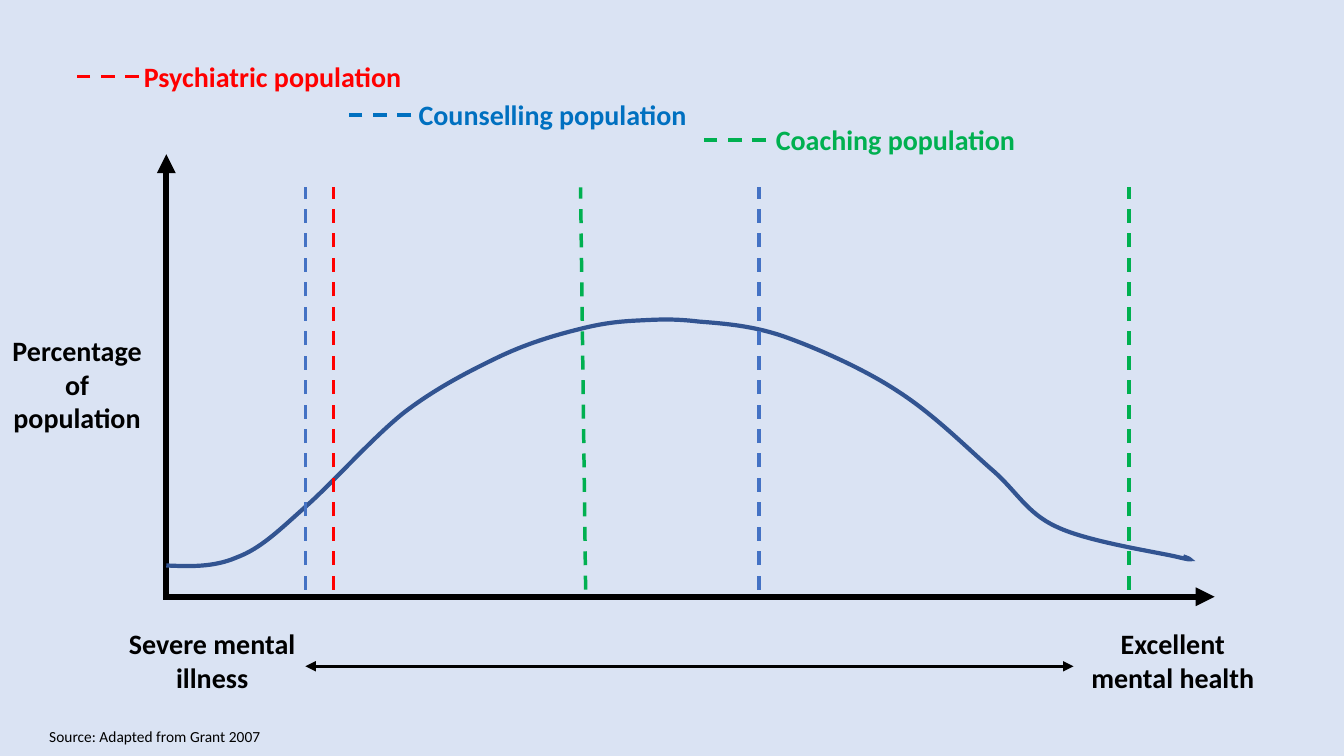
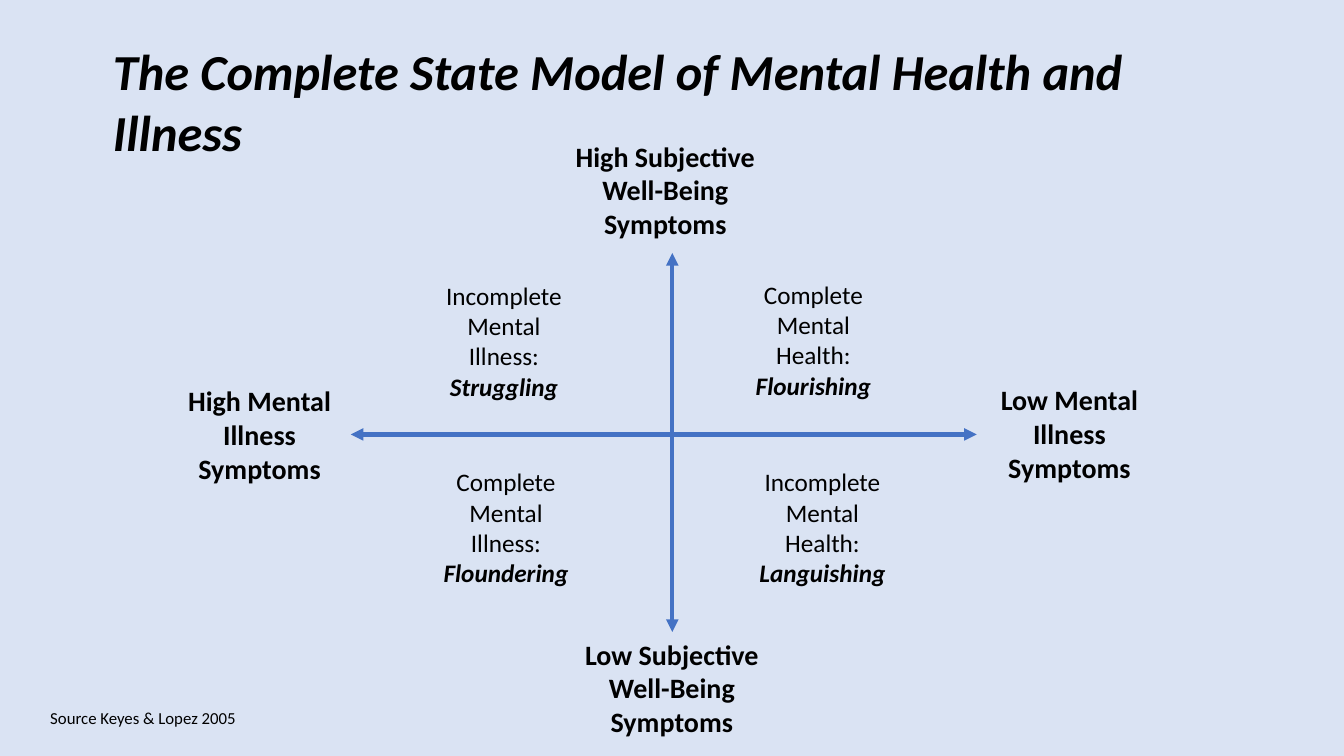
from dataclasses import dataclass

from lxml.etree import SubElement
from pptx import Presentation
from pptx.dml.color import RGBColor
from pptx.enum.dml import MSO_LINE
from pptx.enum.shapes import MSO_CONNECTOR
from pptx.enum.text import MSO_ANCHOR, MSO_AUTO_SIZE as AutoSize, PP_ALIGN as Align
from pptx.oxml.ns import qn
from pptx.util import Inches, Pt


@dataclass(frozen=True)
class Theme:
    font: str = "Calibri"
    background: str = "DAE3F3"
    ink: str = "000000"
    curve: str = "325491"
    blue: str = "4472C4"
    psychiatric: str = "FF0000"
    counselling: str = "0070C0"
    coaching: str = "00B050"
    title: int = 36
    label: int = 20
    body: int = 18
    source: int = 12
    small_source: int = 11
    axis: float = 4.5
    arrow: float = 3
    thin: float = 2.5


THEME = Theme()
TITLE_ONLY, BLANK = 5, 6


def write(para, text, size=THEME.label, color=THEME.ink, bold=False, italic=False):
    """Add one formatted span of text to a paragraph."""
    span = para.add_run()
    span.text = text
    font = span.font
    font.name, font.size = THEME.font, Pt(size)
    font.bold, font.italic = bold, italic
    font.color.rgb = RGBColor.from_string(color)


class Builder:
    """Holds the deck, its style and the current slide."""

    def __init__(self, theme):
        self.theme = theme
        self.deck = Presentation()
        self.deck.slide_width, self.deck.slide_height = Inches(40 / 3), Inches(7.5)
        fill = self.deck.slide_master.background.fill
        fill.solid()
        fill.fore_color.rgb = RGBColor.from_string(theme.background)
        self.page = None

    def add_page(self, layout):
        self.page = self.deck.slides.add_slide(self.deck.slide_layouts[layout])

    def setup(self, box, align):
        frame = box.text_frame
        frame.word_wrap = True
        frame.auto_size = AutoSize.SHAPE_TO_FIT_TEXT
        frame.vertical_anchor = MSO_ANCHOR.TOP
        para = frame.paragraphs[0]
        para.alignment = align
        return para

    def title(self, text, left, top, width, height):
        box = self.page.shapes.title
        box.left, box.top = Inches(left), Inches(top)
        box.width, box.height = Inches(width), Inches(height)
        write(self.setup(box, Align.LEFT), text,
              size=self.theme.title, bold=True, italic=True)

    def text_box(self, left, top, width, height, align=Align.CENTER):
        box = self.page.shapes.add_textbox(
            Inches(left), Inches(top), Inches(width), Inches(height))
        return self.setup(box, align)

    def label(self, text, place, color=THEME.ink, align=Align.CENTER):
        write(self.text_box(*place, align), text, color=color, bold=True)

    def source(self, text, place, size):
        write(self.text_box(*place, Align.LEFT), text, size=size)

    def line(self, start, end, color, width, dashed=False, ends=()):
        line = self.page.shapes.add_connector(
            MSO_CONNECTOR.STRAIGHT, *map(Inches, start + end))
        line.line.color.rgb = RGBColor.from_string(color)
        line.line.width = Pt(width)
        if dashed:
            line.line.dash_style = MSO_LINE.DASH
        outline = line.line._get_or_add_ln()
        for end_name in ends:
            SubElement(outline, qn(f"a:{end_name}"), type="triangle")
        SubElement(line._element.spPr, qn("a:effectLst"))

    def curve(self, start, segments, size, color, width):
        outline = self.page.shapes.build_freeform(*map(Inches, start))
        outline.add_line_segments(
            [(Inches(x), Inches(y)) for segment in segments for x, y in segment],
            close=False)
        shape = outline.convert_to_shape()

        # Each three straight steps become one cubic step
        track = next(shape._element.iter(qn("a:path")))
        steps = track.findall(qn("a:lnTo"))
        for first in range(0, len(steps), 3):
            cubic = SubElement(track, qn("a:cubicBezTo"))
            for step in steps[first:first + 3]:
                cubic.append(step[0])
                track.remove(step)

        # The frame follows the drawn curve, not its control points
        shape.width, shape.height = map(Inches, size)
        track.set("w", str(shape.width))
        track.set("h", str(shape.height))

        shape.shadow.inherit = False
        shape.fill.background()
        shape.line.color.rgb = RGBColor.from_string(color)
        shape.line.width = Pt(width)
        SubElement(shape.line._get_or_add_ln(), qn("a:miter"), lim="800000")


BOTH_ENDS = ("headEnd", "tailEnd")

# Control points of the population curve
CURVE_START = (1.65, 5.61)
CURVE_SIZE = (10.16, 2.45)
CURVE = [
    ((1.88, 5.62), (2.12, 5.63), (2.35, 5.53)),
    ((2.59, 5.44), (2.77, 5.26), (3.04, 5.02)),
    ((3.31, 4.78), (3.69, 4.35), (4, 4.1)),
    ((4.31, 3.86), (4.64, 3.69), (4.93, 3.55)),
    ((5.22, 3.41), (5.49, 3.33), (5.73, 3.27)),
    ((5.96, 3.21), (6.12, 3.19), (6.33, 3.18)),
    ((6.53, 3.17), (6.68, 3.16), (6.93, 3.19)),
    ((7.18, 3.21), (7.48, 3.23), (7.81, 3.35)),
    ((8.14, 3.47), (8.59, 3.67), (8.92, 3.89)),
    ((9.26, 4.11), (9.57, 4.42), (9.83, 4.65)),
    ((10.09, 4.87), (10.18, 5.09), (10.49, 5.23)),
    ((10.81, 5.38), (11.5, 5.48), (11.7, 5.53)),
    ((11.91, 5.58), (11.74, 5.52), (11.74, 5.52)),
]


def population_page(build):
    theme = build.theme
    build.add_page(BLANK)

    # Axes and distribution
    for start, end in (((1.65, 5.95), (1.65, 1.53)), ((1.65, 5.92), (12.05, 5.92))):
        build.line(start, end, theme.ink, theme.axis, ends=("tailEnd",))
    build.curve(CURVE_START, CURVE, CURVE_SIZE, theme.curve, theme.arrow)

    # Population limits
    for bottom, top, color in (
        (3.31, 3.31, theme.psychiatric),
        (3.03, 3.03, theme.blue),
        (7.53, 7.53, theme.blue),
        (5.81, 5.76, theme.coaching),
        (11.2, 11.2, theme.coaching),
    ):
        build.line((bottom, 5.85), (top, 1.86), color, theme.thin, dashed=True)

    # Axis labels and scale
    for text, place in (
        ("Percentage of population", (0, 3.26, 1.53, 1.11)),
        ("Severe mental illness", (1.18, 6.17, 1.85, 0.77)),
        ("Excellent mental health", (10.65, 6.17, 1.97, 0.77)),
    ):
        build.label(text, place)
    build.line((3.03, 6.61), (10.65, 6.61), theme.ink, theme.thin, ends=BOTH_ENDS)

    # Legend: a dashed key before each name
    for name, left, top, width, key, color in (
        ("Psychiatric", 1.01, 0.54, 3.07, 0.76, theme.psychiatric),
        ("Counselling", 3.66, 0.92, 3.25, 3.46, theme.counselling),
        ("Coaching", 6.78, 1.17, 3.39, 6.98, theme.coaching),
    ):
        build.label(f"{name} population", (left, top, width, 0.44), color, Align.RIGHT)
        middle = top + 0.22
        build.line((key + 0.62, middle), (key, middle), color, theme.thin, dashed=True)

    build.source("Source: Adapted from Grant 2007", (0.39, 7.16, 12.56, 0.29),
                 theme.small_source)


def model_page(build):
    theme = build.theme
    build.add_page(TITLE_ONLY)
    build.title("The Complete State Model of Mental Health and Illness",
                1.02, 0.35, 11.42, 0.71)

    # Ends of the two axes
    for text, left, top, width in (
        ("Low Subjective Well-Being Symptoms", 5.57, 6.27, 2.19),
        ("Low Mental Illness Symptoms", 9.81, 3.75, 1.6),
        ("High Subjective Well-Being Symptoms", 5.44, 1.33, 2.32),
        ("High Mental Illness Symptoms", 1.67, 3.76, 1.81),
    ):
        build.label(text, (left, top, width, 1.11))

    # Quadrants
    for condition, state, left, top in (
        ("Incomplete Mental Illness: ", "Struggling", 4.2, 2.73),
        ("Complete Mental Illness: ", "Floundering", 4.22, 4.58),
        ("Complete Mental Health: ", "Flourishing", 7.27, 2.72),
        ("Incomplete Mental Health: ", "Languishing", 7.36, 4.58),
    ):
        para = build.text_box(left, top, 1.6, 1.31)
        write(para, condition, size=theme.body)
        write(para, state, size=theme.body, bold=True, italic=True)

    build.source("Source Keyes & Lopez 2005", (0.4, 6.97, 2.19, 0.3), theme.source)

    # Axes
    for start, end in (((3.48, 4.31), (9.69, 4.31)), ((6.67, 6.27), (6.67, 2.51))):
        build.line(start, end, theme.blue, theme.arrow, ends=BOTH_ENDS)


def main():
    build = Builder(THEME)
    population_page(build)
    model_page(build)
    build.deck.save("out.pptx")


if __name__ == "__main__":
    main()
